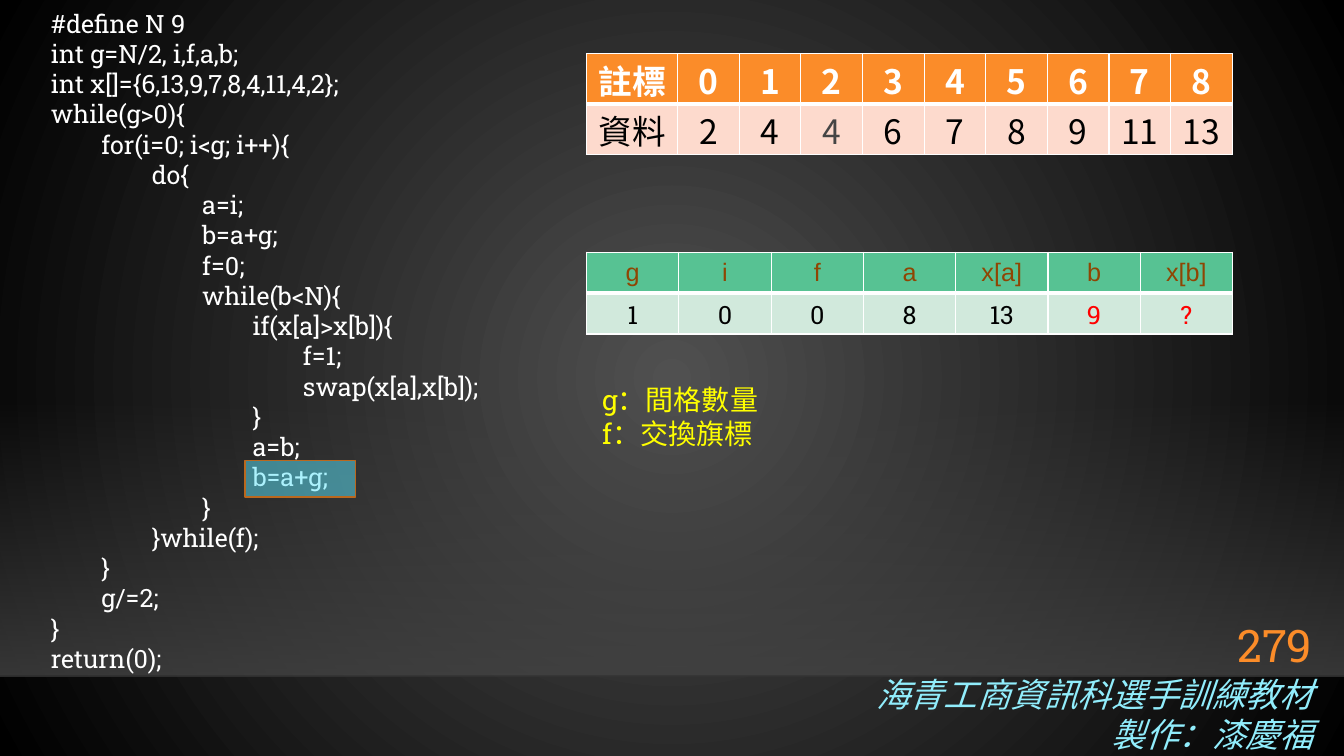
from lxml.etree import SubElement
from pptx import Presentation
from pptx.dml.color import RGBColor
from pptx.enum.shapes import MSO_CONNECTOR, MSO_SHAPE
from pptx.enum.text import MSO_ANCHOR, PP_ALIGN
from pptx.oxml.ns import qn
from pptx.util import Pt

COLORS = {
    "white": "FFFFFF", "black": "000000", "glow": "505050", "floor": "454545",
    "orange": "FB8C29", "peach": "FDDACD", "green": "57C293", "mint": "D1E9DC",
    "brown": "8F4503", "red": "FF0000", "yellow": "FFFF00", "sky": "91EDFC",
    "cyan": "5AE4FB", "rust": "BA681E",
}
SLAB, CJK = "Roboto Slab", "Noto Sans CJK SC"

CODE = """#define N 9
int g=N/2, i,f,a,b;
int x[]={6,13,9,7,8,4,11,4,2};
while(g>0){
    for(i=0; i<g; i++){
        do{
            a=i;
            b=a+g;
            f=0;
            while(b<N){
                if(x[a]>x[b]){
                    f=1;
                    swap(x[a],x[b]);
                }
                a=b;
                b=a+g;
            }
        }while(f);
    }
    g/=2;
}
return(0);"""


def rgb(name):
    return RGBColor.from_string(COLORS[name])


def write_text(frame, text, size=18, font=SLAB, color="white", bold=False,
               italic=False, align=PP_ALIGN.LEFT):
    """Fill a text frame, one paragraph per line of text."""
    for index, line in enumerate(text.split("\n")):
        paragraph = frame.add_paragraph() if index else frame.paragraphs[0]
        paragraph.alignment = align
        run = paragraph.add_run()
        run.text = line
        run.font.size, run.font.name = Pt(size), font
        run.font.bold, run.font.italic = bold, italic
        run.font.color.rgb = rgb(color)
        SubElement(run.font._element, qn("a:ea"), typeface=CJK)


def add_text(slide, left, top, width, height, text, wrap=True, **text_format):
    shape = slide.shapes.add_textbox(Pt(left), Pt(top), Pt(width), Pt(height))
    shape.text_frame.word_wrap = wrap
    write_text(shape.text_frame, text, **text_format)


def add_rectangle(slide, left, top, width, height):
    shape = slide.shapes.add_shape(
        MSO_SHAPE.RECTANGLE, Pt(left), Pt(top), Pt(width), Pt(height))
    shape.shadow.inherit = False
    return shape


def set_alpha(element, percent):
    """Make the first colour inside an element translucent."""
    color = element.find(".//" + qn("a:srgbClr"))
    SubElement(color, qn("a:alpha"), val=str(percent * 1000))


def set_gradient(fill, element, stops):
    """Set a gradient of (position, colour, alpha) stops; return its element."""
    fill.gradient()
    gradient = element.find(".//" + qn("a:gradFill"))
    for child in list(gradient):
        gradient.remove(child)
    stop_list = SubElement(gradient, qn("a:gsLst"))
    for position, color, alpha in stops:
        stop = SubElement(stop_list, qn("a:gs"), pos=str(position * 1000))
        SubElement(stop, qn("a:srgbClr"), val=COLORS[color])
        set_alpha(stop, alpha)
    return gradient


def set_borders(cell, widths):
    """Draw white borders; widths maps side letters to points."""
    properties = cell._tc.get_or_add_tcPr()
    for side, width in widths.items():
        line = SubElement(properties, qn(f"a:ln{side}"), w=str(Pt(width)))
        fill = SubElement(line, qn("a:solidFill"))
        SubElement(fill, qn("a:srgbClr"), val=COLORS["white"])


def add_grid(slide, left, top, widths, row_height, rows, fills, formats,
             special, anchor=MSO_ANCHOR.TOP, margins=(3.6, 3.6)):
    """Add a header-and-values table; special maps value columns to colours."""
    table = slide.shapes.add_table(
        len(rows), len(widths), Pt(left), Pt(top),
        Pt(sum(widths)), Pt(row_height * len(rows))).table
    for column, width in zip(table.columns, widths):
        column.width = Pt(width)
    for r, values in enumerate(rows):
        table.rows[r].height = Pt(row_height)
        for c, value in enumerate(values):
            cell = table.cell(r, c)
            set_borders(cell, {"L": 1, "R": 1, "T": 3 if r else 1, "B": 1 if r else 3})
            cell.fill.solid()
            cell.fill.fore_color.rgb = rgb(fills[r])
            cell.vertical_anchor = anchor
            cell.margin_top, cell.margin_bottom = map(Pt, margins)
            text_format = dict(formats[r])
            if r and c in special:
                text_format["color"] = special[c]
            write_text(cell.text_frame, value, align=PP_ALIGN.CENTER, **text_format)


def add_backdrop(slide):
    gradient = set_gradient(slide.background.fill, slide._element,
                            [(0, "glow", 100), (100, "black", 100)])
    circle = SubElement(gradient, qn("a:path"), path="circle")
    SubElement(circle, qn("a:fillToRect"), dict.fromkeys("ltrb", "50000"))

    floor = add_rectangle(slide, 0, 285, 960, 198)
    gradient = set_gradient(floor.fill, floor._element,
                            [(0, "floor", 0), (100, "floor", 80)])
    SubElement(gradient, qn("a:lin"), ang="5400000", scaled="0")
    floor.line.fill.background()

    edge = slide.shapes.add_connector(
        MSO_CONNECTOR.STRAIGHT, 0, Pt(483), Pt(960), Pt(483))
    edge.line.width = Pt(1)
    edge.line.color.rgb = rgb("black")
    set_alpha(edge._element, 20)
    SubElement(edge._element.spPr, qn("a:effectLst"))


def add_highlight(slide):
    highlight = add_rectangle(slide, 175, 329, 79, 26)
    highlight.fill.solid()
    highlight.fill.fore_color.rgb = rgb("cyan")
    set_alpha(highlight._element, 50)
    highlight.line.color.rgb = rgb("rust")
    highlight.line.width = Pt(1.25)


def main():
    presentation = Presentation()
    presentation.slide_width, presentation.slide_height = Pt(960), Pt(540)
    slide = presentation.slides.add_slide(presentation.slide_layouts[6])
    add_backdrop(slide)

    # Footer and page number
    add_text(slide, 615, 477.5, 330, 65.5, "海青工商資訊科選手訓練教材\n製作：漆慶福",
             wrap=False, size=24, font=CJK, color="sky", italic=True,
             align=PP_ALIGN.RIGHT)
    add_text(slide, 861, 438, 83.5, 39.5, "279", size=32, color="orange",
             align=PP_ALIGN.RIGHT)

    # Array contents
    add_grid(slide, 419, 38.3, [65] + [44.05] * 9, 36,
             [["註標", *"012345678"],
              ["資料", "2", "4", "4", "6", "7", "8", "9", "11", "13"]],
             ["orange", "peach"],
             [dict(size=24, font=CJK, bold=True),
              dict(size=24, font=CJK, color="black")],
             {3: "floor"}, margins=(1.2, 0))

    # Program listing
    add_text(slide, 29.3, 2.2, 392, 487.5, CODE.replace("    ", "\t"))

    # Variable values
    add_grid(slide, 419, 180.2, [65.92] * 7, 29.2,
             [["g", "i", "f", "a", "x[a]", "b", "x[b]"],
              ["1", "0", "0", "8", "13", "9", "?"]],
             ["green", "mint"],
             [dict(font="Arial", color="brown"), dict(color="black")],
             {5: "red", 6: "red"}, anchor=MSO_ANCHOR.MIDDLE)

    # Legend and current line
    add_text(slide, 423, 270, 128, 55.5, "g：間格數量\nf：交換旗標",
             size=20, color="yellow")
    add_highlight(slide)

    presentation.save("out.pptx")


if __name__ == "__main__":
    main()
